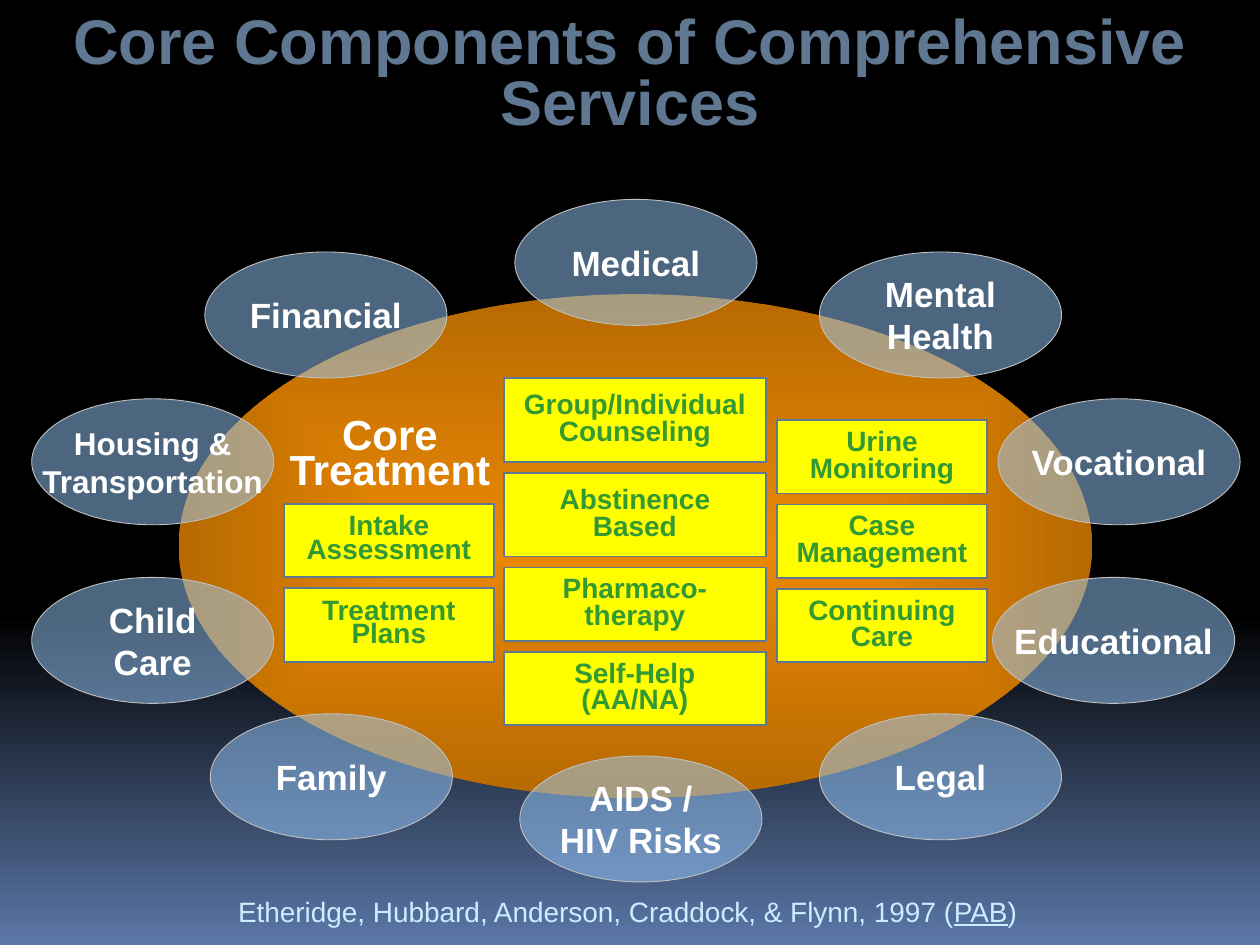
from dataclasses import dataclass

from lxml import etree
from pptx import Presentation
from pptx.dml.color import RGBColor
from pptx.enum.shapes import MSO_SHAPE
from pptx.enum.text import MSO_ANCHOR, PP_ALIGN
from pptx.oxml.ns import qn
from pptx.util import Cm, Pt

OVAL, RECT = MSO_SHAPE.OVAL, MSO_SHAPE.RECTANGLE
TOP, MIDDLE = MSO_ANCHOR.TOP, MSO_ANCHOR.MIDDLE
CENTER = PP_ALIGN.CENTER


@dataclass(frozen=True)
class Theme:
    font: str = "Arial"
    slate: str = "5F7791"
    white: str = "FFFFFF"
    green: str = "339933"
    yellow: str = "FFFF00"
    sky: str = "99CCFF"
    silver: str = "C0C0C0"
    ice: str = "CCECFF"
    night: tuple = ((0, "000000"), (65, "000000"), (100, "5B77A8"))
    amber: tuple = ((0, "EB8803"), (100, "B76A02"))
    title: int = 36
    heading: int = 24
    service: int = 20
    service_small: int = 18
    body: int = 16


T = Theme()

# label, x and y within the ring (cm), type size, wrap
SERVICES = [
    ("Medical", 9.74, 0, T.service, True),
    ("Mental Health", 15.88, 1.06, T.service, True),
    ("Vocational", 19.48, 4.02, T.service, False),
    ("Educational", 19.37, 7.62, T.service, False),
    ("Legal", 15.88, 10.37, T.service, True),
    ("AIDS / HIV Risks", 9.84, 11.22, T.service, True),
    ("Financial", 3.49, 1.06, T.service, True),
    ("Housing &\nTransportation", 0, 4.02, T.service_small, False),
    ("Child Care", 0, 7.62, T.service, True),
    ("Family", 3.6, 10.37, T.service, True),
]

# x, y and width within the core (cm), line spacing, (label, height) cards
COLUMNS = [
    (12.06, 2.54, 4.24, 0.8, [("Urine Monitoring", 1.48), ("Case Management", 1.48),
                              ("Continuing Care", 1.48)]),
    (6.56, 1.69, 5.28, 0.8, [("Group/Individual Counseling", 1.69), ("Abstinence\nBased", 1.69),
                             ("Pharmaco-therapy", 1.48), ("Self-Help\n(AA/NA)", 1.48)]),
    (2.12, 4.23, 4.24, 0.7, [("Intake\nAssessment", 1.48), ("Treatment\nPlans", 1.48)]),
]
CARD_GAP = 0.22


def rgb(color):
    return RGBColor.from_string(color)


def set_gradient(fill, owner, stops, radial=False):
    """Give a fill its colour stops, running downwards or out from the centre."""
    fill.gradient()
    grad = next(owner.iter(qn("a:gradFill")))
    for child in list(grad):
        grad.remove(child)
    gs_list = etree.SubElement(grad, qn("a:gsLst"))
    for pos, color in stops:
        gs = etree.SubElement(gs_list, qn("a:gs"), pos=str(pos * 1000))
        etree.SubElement(gs, qn("a:srgbClr"), val=color)
    if radial:
        way = etree.SubElement(grad, qn("a:path"), {"path": "shape"})
        etree.SubElement(way, qn("a:fillToRect"), {side: "50000" for side in "ltrb"})
    else:
        etree.SubElement(grad, qn("a:lin"), ang="5400000", scaled="0")


def write(tf, text, size, color, bold=True, spacing=1.0, anchor=MIDDLE, wrap=True, inset=None):
    """Fill a text frame with one centred paragraph per line of text."""
    tf.word_wrap, tf.vertical_anchor = wrap, anchor
    if inset is not None:
        for side in ("left", "top", "right", "bottom"):
            setattr(tf, f"margin_{side}", inset)
    for i, line in enumerate(text.split("\n")):
        p = tf.add_paragraph() if i else tf.paragraphs[0]
        p.alignment, p.line_spacing = CENTER, spacing
        if not i:
            p.space_before = Pt(0)
        add_run(p, line, size, color, bold=bold)


def add_run(p, text, size, color, **extra):
    r = p.add_run()
    r.text = text
    for name, value in {"name": T.font, "size": Pt(size), **extra}.items():
        setattr(r.font, name, value)
    r.font.color.rgb = rgb(color)


def add_shape(s, kind, x, y, w, h, fill=None, line=None, width=1):
    sp = s.shapes.add_shape(kind, Cm(x), Cm(y), Cm(w), Cm(h))
    sp.shadow.inherit = False
    if fill:
        sp.fill.solid()
        sp.fill.fore_color.rgb = rgb(fill)
    if line:
        sp.line.color.rgb = rgb(line)
        sp.line.width = Pt(width)
    else:
        sp.line.fill.background()
    return sp


def add_title(s, x, y, w, h):
    sp = s.shapes.title
    sp.left, sp.top, sp.width, sp.height = Cm(x), Cm(y), Cm(w), Cm(h)
    write(sp.text_frame, "Core Components of Comprehensive Services", T.title, T.slate,
          spacing=0.8, anchor=TOP)


def add_core_oval(s, x, y, w, h):
    sp = add_shape(s, OVAL, x, y, w, h)
    set_gradient(sp.fill, sp._element.spPr, T.amber, radial=True)


def add_services(s, x, y):
    """Ring of half-transparent ovals around the core."""
    for label, dx, dy, size, wrap in SERVICES:
        sp = add_shape(s, OVAL, x + dx, y + dy, 4.88, 2.54, T.sky, T.silver, 0.5)
        color = sp._element.spPr.find(qn("a:solidFill"))[0]
        etree.SubElement(color, qn("a:alpha"), val="50000")
        write(sp.text_frame, label, size, T.white, wrap=wrap, inset=0)


def add_treatment(s, x, y):
    """Columns of cards inside the core, and their heading."""
    for dx, dy, w, spacing, cards in COLUMNS:
        top = y + dy
        for label, h in cards:
            sp = add_shape(s, RECT, x + dx, top, w, h, T.yellow, T.slate)
            write(sp.text_frame, label, T.body, T.green, spacing=spacing)
            top += h + CARD_GAP
    box = s.shapes.add_textbox(Cm(x + 1.96), Cm(y + 2.45), Cm(4.6), Cm(1.68))
    write(box.text_frame, "Core\nTreatment", T.heading, T.white, spacing=0.7, wrap=False)


def add_citation(s, x, y, w, h):
    tf = s.shapes.add_textbox(Cm(x), Cm(y), Cm(w), Cm(h)).text_frame
    write(tf, "Etheridge, Hubbard, Anderson, Craddock, & Flynn, 1997 (", T.body, T.ice,
          bold=False, anchor=TOP)
    add_run(tf.paragraphs[0], "PAB", T.body, T.ice, underline=True)
    add_run(tf.paragraphs[0], ")", T.body, T.ice)


def main():
    prs = Presentation()
    prs.slide_width, prs.slide_height = Cm(25.4), Cm(19.05)
    s = prs.slides.add_slide(prs.slide_layouts[5])
    set_gradient(s.background.fill, s._element, T.night)
    add_title(s, 1.06, 0.2, 23.28, 2.7)
    add_core_oval(s, 3.6, 5.93, 18.42, 10.16)
    add_services(s, 0.64, 4.02)
    add_treatment(s, 3.6, 5.93)
    add_citation(s, 4.23, 17.9, 16.84, 0.94)
    prs.save("out.pptx")


if __name__ == "__main__":
    main()
